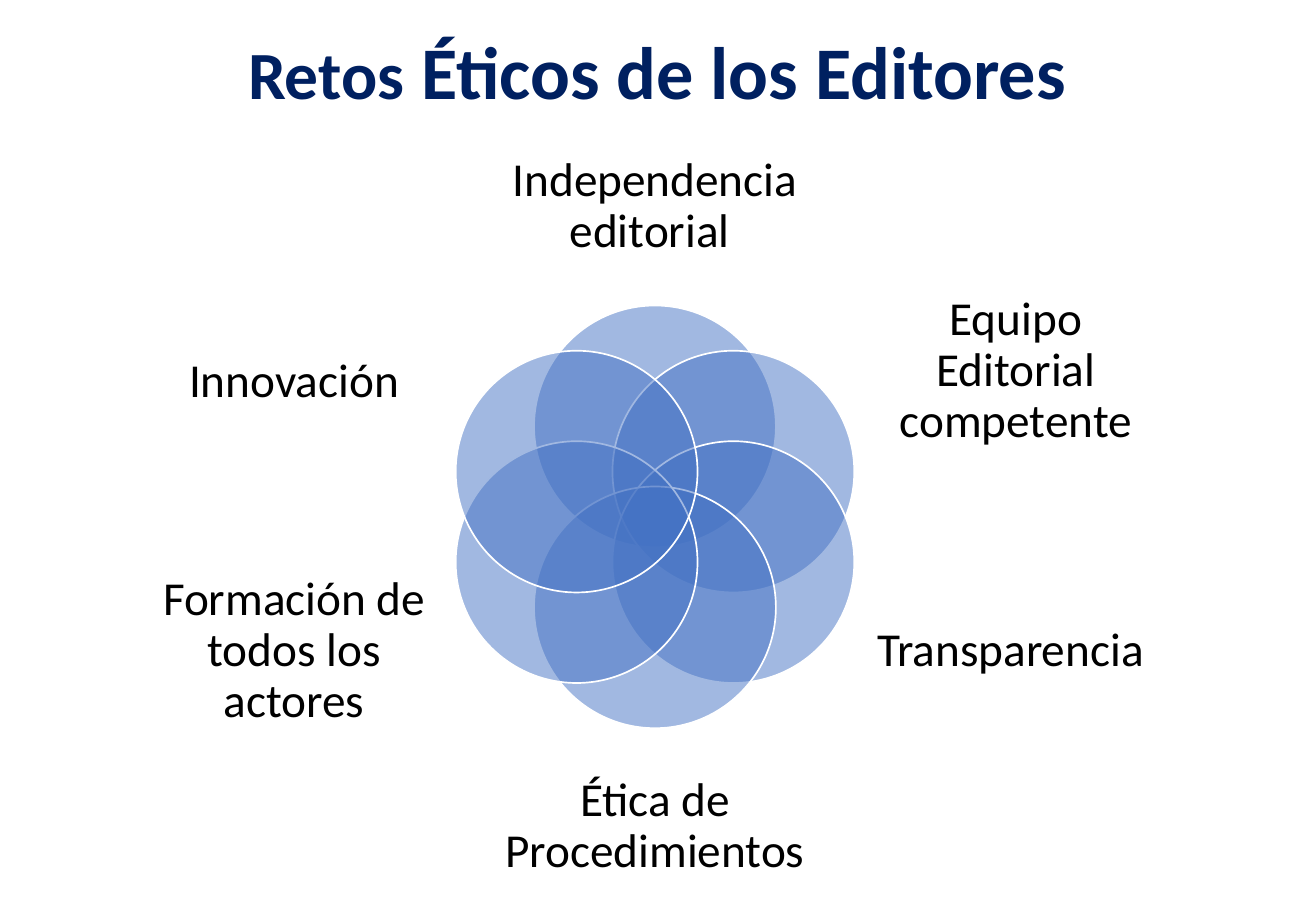
from math import cos, pi, sin

from lxml.etree import SubElement
from pptx import Presentation
from pptx.dml.color import RGBColor
from pptx.enum.shapes import MSO_SHAPE as Shape
from pptx.enum.text import MSO_ANCHOR as Anchor, PP_ALIGN as Align
from pptx.oxml.ns import qn
from pptx.util import Inches, Pt

NAVY = RGBColor(0x00, 0x20, 0x60)
BLUE = RGBColor(0x44, 0x72, 0xC4)
WHITE = RGBColor(0xFF, 0xFF, 0xFF)
BLACK = RGBColor(0x00, 0x00, 0x00)
FONT = "Calibri"
DIAMETER = 1.99
ORBIT = 0.745
CHALLENGES = [
    ("Independencia editorial ", 0, -2.55, 2.49, 1.35),
    ("Equipo Editorial competente", 2.97, -1.2, 2.36, 1.48),
    ("Transparencia ", 2.97, 1.11, 2.36, 1.66),
    ("Ética de Procedimientos", 0, 2.55, 2.49, 1.35),
    ("Formación de todos los actores", -2.97, 1.11, 2.36, 1.66),
    ("Innovación", -2.97, -1.11, 2.36, 1.66),
]


def add_text(shapes, box, color):
    """Add a wrapped, centred text box and return its frame and paragraph."""
    frame = shapes.add_textbox(*map(Inches, box)).text_frame
    frame.word_wrap = True
    frame.vertical_anchor = Anchor.MIDDLE
    paragraph = frame.paragraphs[0]
    paragraph.alignment = Align.CENTER
    paragraph.line_spacing = 0.9
    paragraph.font.name = FONT
    paragraph.font.color.rgb = color
    return frame, paragraph


def add_title(slide, box):
    """Write the two-size slide title."""
    _, paragraph = add_text(slide.shapes, box, NAVY)
    paragraph.font.bold = True
    for text, size in (("Retos", 40), (" Éticos de los Editores", 44)):
        run = paragraph.add_run()
        run.text = text
        run.font.size = Pt(size)


def add_circle(shapes, center_x, center_y):
    """Add one half-transparent circle around the given centre."""
    circle = shapes.add_shape(
        Shape.OVAL,
        Inches(center_x - DIAMETER / 2),
        Inches(center_y - DIAMETER / 2),
        Inches(DIAMETER),
        Inches(DIAMETER),
    )
    circle.shadow.inherit = False
    circle.fill.solid()
    circle.fill.fore_color.rgb = BLUE
    color = circle.fill._xPr.find(qn("a:solidFill"))[0]
    SubElement(color, qn("a:alpha"), val="50000")
    circle.line.color.rgb = WHITE
    circle.line.width = Pt(1)


def add_label(shapes, text, box):
    """Write the label of one circle without margins."""
    frame, paragraph = add_text(shapes, box, BLACK)
    frame.margin_left = frame.margin_right = 0
    frame.margin_top = frame.margin_bottom = 0
    paragraph.font.size = Pt(28)
    paragraph.add_run().text = text


def add_venn(slide, box):
    """Draw the ring of overlapping circles with their labels."""
    left, top, width, height = box
    center_x, center_y = left + width / 2, top + height / 2
    shapes = slide.shapes.add_group_shape().shapes
    for index, (text, shift_x, shift_y, label_width, label_height) in enumerate(CHALLENGES):
        angle = 2 * pi * index / len(CHALLENGES)
        add_circle(shapes, center_x + ORBIT * sin(angle), center_y - ORBIT * cos(angle))
        label_left = center_x + shift_x - label_width / 2
        label_top = center_y + shift_y - label_height / 2
        add_label(shapes, text, (label_left, label_top, label_width, label_height))


def main():
    """Build and save the presentation."""
    presentation = Presentation()
    presentation.slide_width = Inches(10.83)
    presentation.slide_height = Inches(7.5)
    slide = presentation.slides.add_slide(presentation.slide_layouts[6])
    add_title(slide, (0.74, 0.02, 9.34, 1.2))
    add_venn(slide, (1.24, 1.03, 8.3, 6.45))
    presentation.save("out.pptx")


if __name__ == "__main__":
    main()
